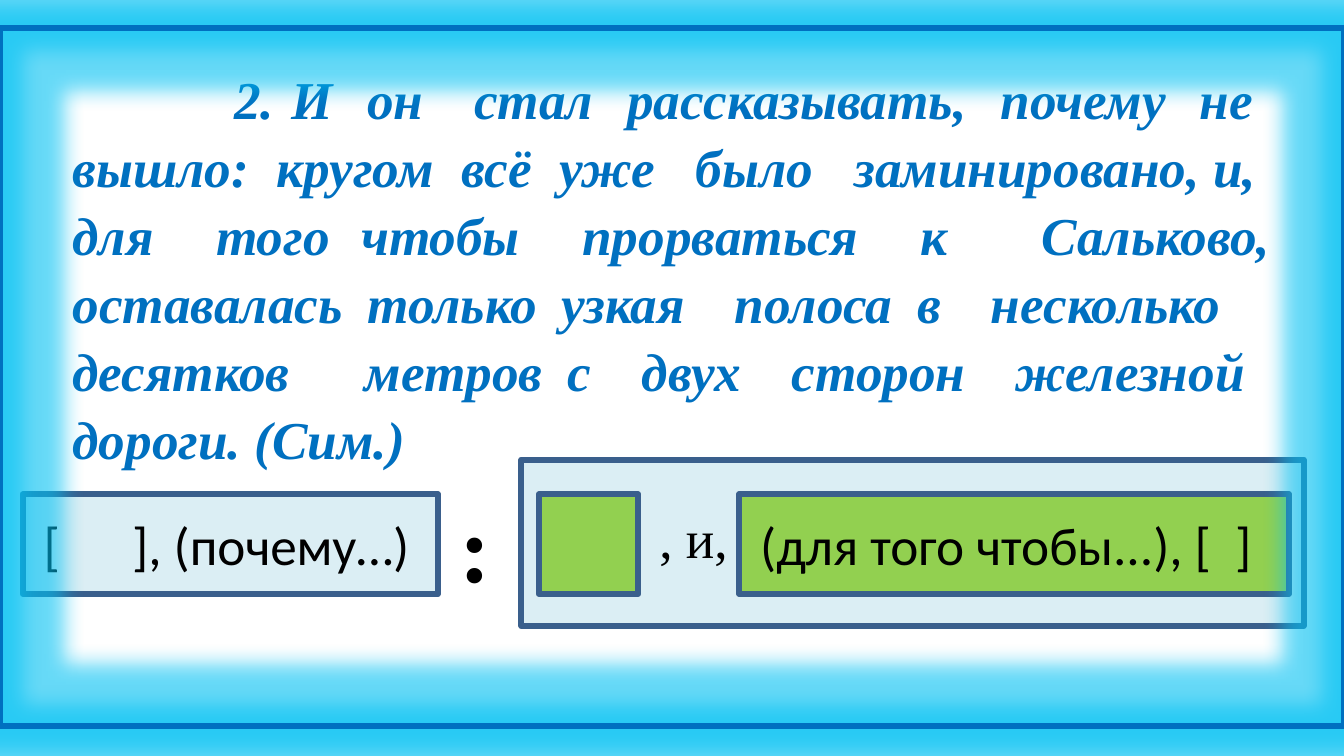
from lxml.etree import SubElement
from pptx import Presentation
from pptx.dml.color import RGBColor
from pptx.enum.shapes import MSO_SHAPE
from pptx.enum.text import MSO_ANCHOR, MSO_AUTO_SIZE, PP_ALIGN
from pptx.oxml.ns import qn
from pptx.util import Inches, Pt

WIDE, HIGH = Inches(6.31), Inches(3.55)
HUES = {
    "text": "0070C0", "ink": "000000", "pale": "DBEEF4",
    "green": "92D050", "edge": "3A5F8C", "glow": "00C1F3",
}
ROW, TALL = 65.4, 13.2
SERIF, SANS = "Times New Roman", "Calibri"
QUOTE = (
    "2. И  он   стал  рассказывать,  почему  не  вышло:  кругом  всё  уже   "
    "было   заминировано, и,  для  того чтобы  прорваться  к   Сальково, "
    "оставалась только узкая  полоса в  несколько   десятков   метров с  "
    "двух  сторон  железной  дороги. (Сим.)"
)


def hue(name):
    """Return the named colour."""
    return RGBColor.from_string(HUES[name])


def area(left, top, width, height):
    """Turn percentages of the slide into lengths."""
    pairs = zip((left, top, width, height), (WIDE, HIGH, WIDE, HIGH))
    return [round(part * full / 100) for part, full in pairs]


def write(shape, text, face, size, color="ink", bold=False, slant=False):
    """Put one formatted line of text into a shape."""
    para = shape.text_frame.paragraphs[0]
    para.text = text
    para.alignment = PP_ALIGN.LEFT
    for run in para.runs:
        font = run.font
        font.name, font.size = face, Pt(size)
        font.bold, font.italic = bold, slant
        font.color.rgb = hue(color)
    return para


def add_quote(slide):
    """Fill the body placeholder with the justified sentence."""
    body = slide.placeholders[1]
    body.left, body.top, body.width, body.height = area(5.4, 8.2, 89.2, 61.1)
    frame = body.text_frame
    frame.auto_size = MSO_AUTO_SIZE.NONE
    frame.vertical_anchor = MSO_ANCHOR.TOP
    frame.margin_left = frame.margin_right = 0
    frame.margin_top = frame.margin_bottom = 0
    para = write(body, QUOTE, SERIF, 18, "text", True, True)
    para.alignment = PP_ALIGN.JUSTIFY
    para.line_spacing = Pt(23)
    para.space_before = Pt(0)
    props = para._p.get_or_add_pPr()
    props.set("marL", "0")
    props.set("indent", str(Inches(0.76)))
    SubElement(props, qn("a:buNone"))


def add_box(slide, place, fill=None, edge="edge", text=""):
    """Add an outlined rectangle with an optional fill and text."""
    box = slide.shapes.add_shape(MSO_SHAPE.RECTANGLE, *area(*place))
    box.shadow.inherit = False
    box.line.color.rgb = hue(edge)
    box.line.width = Pt(2)
    if fill:
        box.fill.solid()
        box.fill.fore_color.rgb = hue(fill)
    else:
        box.fill.background()
    if text:
        box.text_frame.vertical_anchor = MSO_ANCHOR.MIDDLE
        write(box, text, SANS, 18)
    return box


def add_mark(slide, place, text, size, bold=False):
    """Add punctuation that stands between the boxes."""
    mark = slide.shapes.add_textbox(*area(*place))
    mark.text_frame.word_wrap = False
    write(mark, text, SERIF, size, bold=bold)


def add_glow(shape, radius, alpha):
    """Give a shape a soft glow."""
    effects = shape._element.spPr.find(qn("a:effectLst"))
    glow = SubElement(effects, qn("a:glow"), rad=str(Pt(radius)))
    color = SubElement(glow, qn("a:srgbClr"), val=HUES["glow"])
    SubElement(color, qn("a:alpha"), val=str(alpha * 1000))


def main():
    """Build the slide with the sentence and its scheme."""
    deck = Presentation()
    deck.slide_width, deck.slide_height = WIDE, HIGH
    slide = deck.slides.add_slide(deck.slide_layouts[1])
    title = slide.shapes.title._element
    title.getparent().remove(title)
    add_quote(slide)
    add_box(slide, (1.7, ROW, 30.9, TALL), "pale", text="[      ], (почему…)")
    add_box(slide, (38.8, 60.8, 58.2, 22), "pale")
    add_mark(slide, (32.6, 63.1, 5.5, 18), ":", 32, True)
    add_box(slide, (40.1, ROW, 7.4, TALL), "green")
    add_box(slide, (55, ROW, 40.9, TALL), "green",
            text="(для того чтобы...), [  ]")
    add_mark(slide, (47.5, ROW, 9.4, 11.3), ", и,", 18)
    border = add_box(slide, (0, 3.7, 100, 92.4), edge="text")
    add_glow(border, 14, 60)
    deck.save("out.pptx")


if __name__ == "__main__":
    main()
